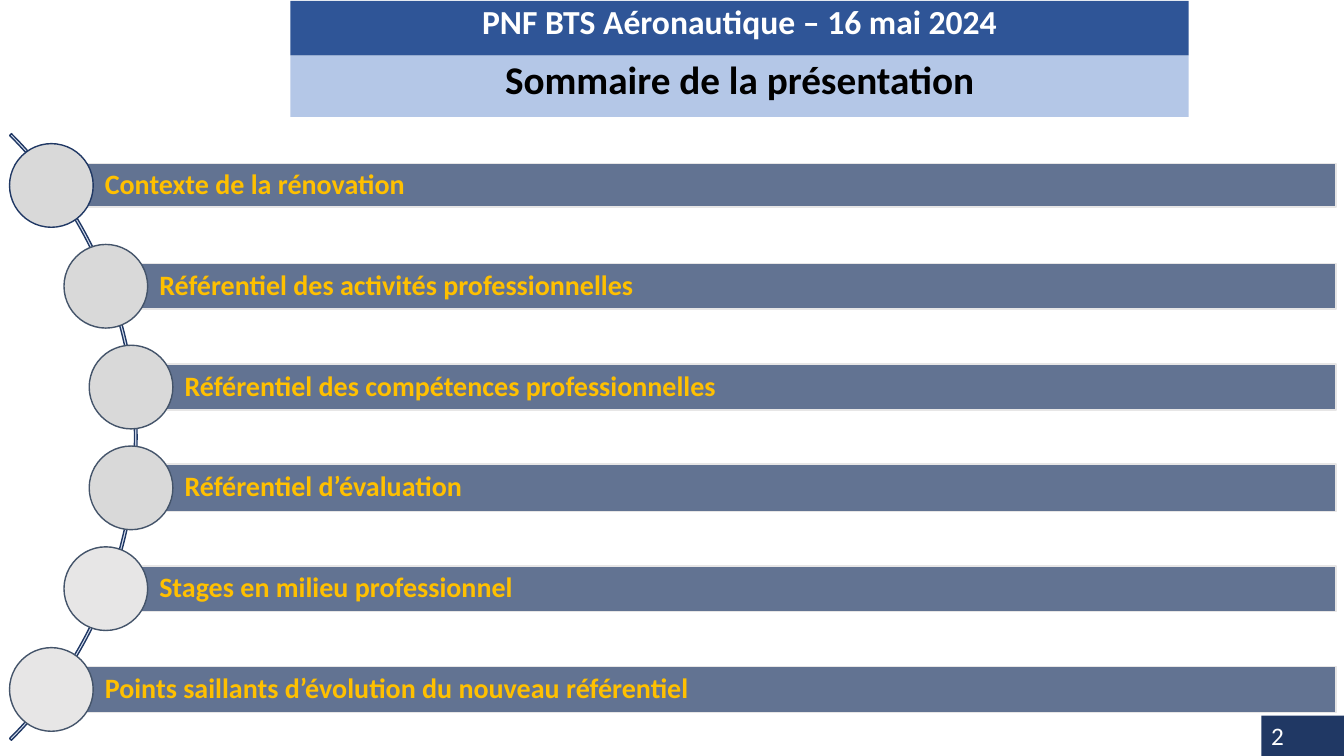
from lxml import etree
from pptx import Presentation
from pptx import util as u
from pptx.dml.color import RGBColor
from pptx.enum import shapes, text
from pptx.oxml.ns import qn

COLORS = {
    "navy": "203864", "blue": "2F5597", "light_blue": "B4C7E7", "pale_blue": "DAE3F3",
    "slate": "44546A", "gray": "D9D9D9", "light_gray": "E7E6E6",
    "gold": "FFC000", "white": "FFFFFF", "black": "000000",
}
WIDTH, HEIGHT = 13.33, 7.5
HEADER_LEFT, HEADER_WIDTH = 2.88, 8.91
# text, top, height, size, fill, font colour
HEADERS = [
    ("Sommaire de la présentation", 0.55, 0.61, 28, "light_blue", "black"),
    ("PNF BTS Aéronautique – 16 mai 2024", 0.01, 0.54, 24, "blue", "white"),
]
# text, centre of the circle across, bar height, circle fill, circle line
TOPICS = [
    ("Contexte de la rénovation", 0.51, 0.43, "gray", "navy"),
    ("Référentiel des activités professionnelles", 1.05, 0.45, "gray", "slate"),
    ("Référentiel des compétences professionnelles", 1.3, 0.46, "gray", "slate"),
    ("Référentiel d’évaluation", 1.3, 0.47, "gray", "slate"),
    ("Stages en milieu professionnel", 1.05, 0.45, "light_gray", "slate"),
    ("Points saillants d’évolution du nouveau référentiel", 0.51, 0.46, "light_gray", "slate"),
]
FIRST_ROW, ROW_PITCH = 1.84, 1.0
BAR_RIGHT, CIRCLE = 13.25, 0.83
ARC_RIGHT, ARC_TOP, ARC_SIZE = 1.36, 0.08, 8.51
ARC_ADJUSTMENTS = (189, 27, 0.003)
NUMBER_WIDTH, NUMBER_HEIGHT = 0.82, 0.4


def color(name):
    return RGBColor.from_string(COLORS[name])


def add_shape(slide, kind, box, fill, line=None):
    shape = slide.shapes.add_shape(kind, *(u.Inches(length) for length in box))
    shape.shadow.inherit = False
    shape.fill.solid()
    shape.fill.fore_color.rgb = color(fill)
    if line:
        shape.line.color.rgb = color(line)
        shape.line.width = u.Pt(1)
    else:
        shape.line.fill.background()
    return shape


def write(shape, words, size, font_color, align, anchor, bold=True):
    frame = shape.text_frame
    frame.word_wrap = True
    frame.vertical_anchor = anchor
    paragraph = frame.paragraphs[0]
    paragraph.alignment = align
    paragraph.line_spacing = 0.9 if bold else 1.0
    run = paragraph.add_run()
    run.text = words
    run.font.name = "Calibri"
    run.font.size = u.Pt(size)
    run.font.bold = bold
    run.font.color.rgb = color(font_color)
    return frame


def set_opacity(shape, percent):
    fill_color = shape.fill._xPr.find(qn("a:solidFill"))[0]
    etree.SubElement(fill_color, qn("a:alpha")).set("val", str(percent * 1000))


def add_topic(slide, row, topic):
    words, center, bar_height, fill, line = topic
    middle = FIRST_ROW + row * ROW_PITCH
    bar = add_shape(slide, shapes.MSO_SHAPE.RECTANGLE,
                    (center, middle - bar_height / 2, BAR_RIGHT - center, bar_height),
                    "navy", "light_gray")
    set_opacity(bar, 70)
    frame = write(bar, words, 20, "gold", text.PP_ALIGN.LEFT, text.MSO_ANCHOR.MIDDLE)
    frame.margin_left = u.Inches(0.53)
    frame.margin_top = frame.margin_right = frame.margin_bottom = u.Inches(0.06)
    add_shape(slide, shapes.MSO_SHAPE.OVAL,
              (center - CIRCLE / 2, middle - CIRCLE / 2, CIRCLE, CIRCLE), fill, line)


def main():
    presentation = Presentation()
    presentation.slide_width = u.Inches(WIDTH)
    presentation.slide_height = u.Inches(HEIGHT)
    slide = presentation.slides.add_slide(presentation.slide_layouts[6])

    number = add_shape(slide, shapes.MSO_SHAPE.RECTANGLE,
                       (WIDTH - NUMBER_WIDTH, HEIGHT - NUMBER_HEIGHT,
                        NUMBER_WIDTH, NUMBER_HEIGHT), "navy")
    write(number, "2", 18, "white", text.PP_ALIGN.LEFT, text.MSO_ANCHOR.TOP, bold=False)

    for words, top, height, size, fill, font_color in HEADERS:
        header = add_shape(slide, shapes.MSO_SHAPE.RECTANGLE,
                           (HEADER_LEFT, top, HEADER_WIDTH, height), fill)
        write(header, words, size, font_color, text.PP_ALIGN.CENTER, text.MSO_ANCHOR.TOP)

    arc = add_shape(slide, shapes.MSO_SHAPE.BLOCK_ARC,
                    (ARC_RIGHT - ARC_SIZE, ARC_TOP, ARC_SIZE, ARC_SIZE), "pale_blue", "navy")
    for index, value in enumerate(ARC_ADJUSTMENTS):
        arc.adjustments[index] = value

    for row, topic in enumerate(TOPICS):
        add_topic(slide, row, topic)

    presentation.save("out.pptx")


if __name__ == "__main__":
    main()
